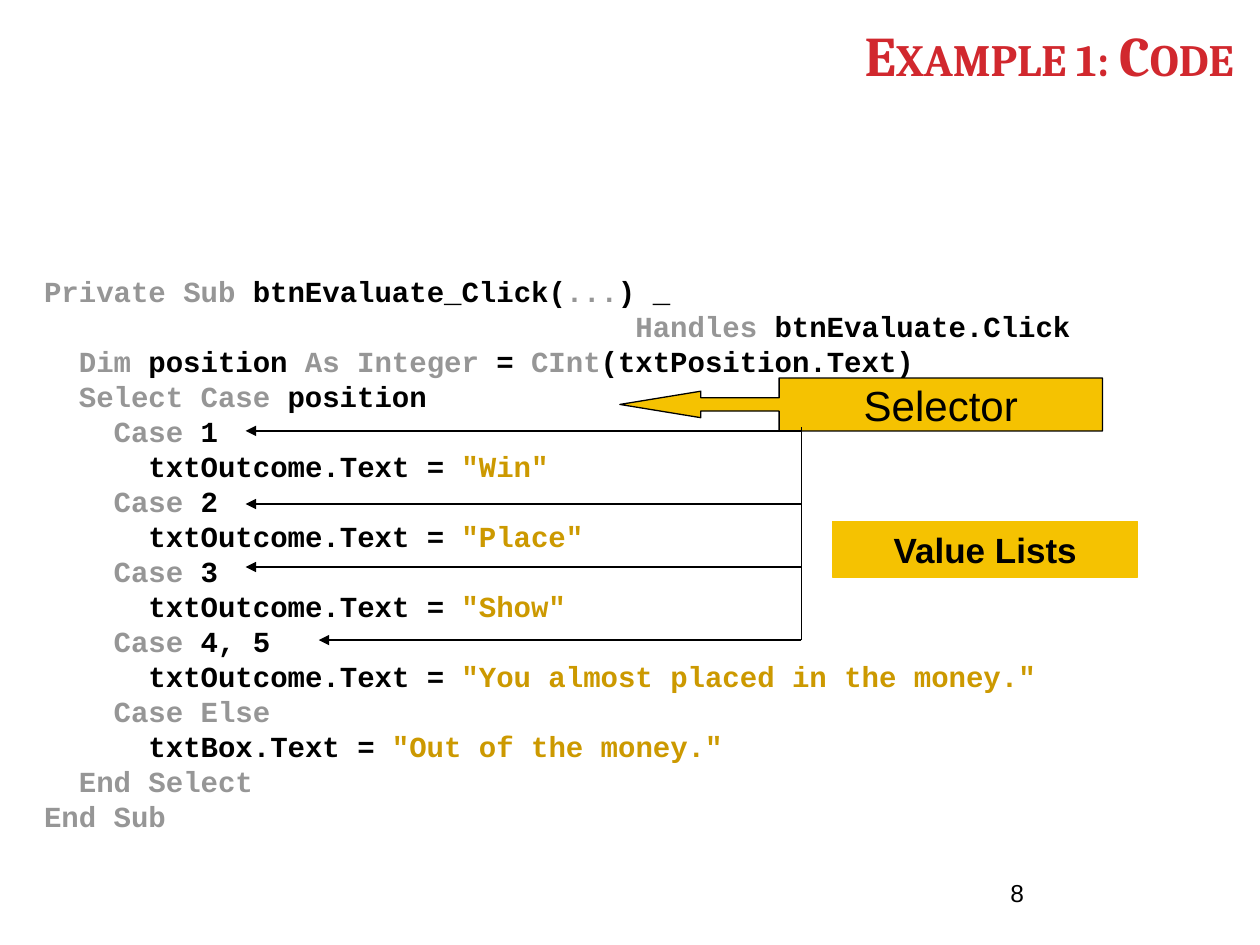
from lxml.etree import SubElement
from pptx import Presentation
from pptx.dml.color import RGBColor
from pptx.enum.shapes import MSO_CONNECTOR, MSO_SHAPE
from pptx.enum.text import MSO_ANCHOR, MSO_AUTO_SIZE, PP_ALIGN
from pptx.oxml.ns import qn
from pptx.util import Inches, Pt

RED = RGBColor(0xD1, 0x28, 0x2E)
BLACK = RGBColor(0, 0, 0)
KEYWORD_GRAY = RGBColor(0x96, 0x96, 0x96)
STRING_GOLD = RGBColor(0xCC, 0x99, 0x00)
YELLOW = RGBColor(0xF5, 0xC2, 0x01)

# Bars set off keywords and string literals from the plain code
CODE = '''\
|Private Sub| btnEvaluate_Click(|...|) _
                                  |Handles| btnEvaluate.Click
  |Dim| position |As Integer| = |CInt|(txtPosition.Text)
  |Select Case| position
    |Case| 1
      txtOutcome.Text = |"Win"|
    |Case| 2
      txtOutcome.Text = |"Place"|
    |Case| 3
      txtOutcome.Text = |"Show"|
    |Case| 4, 5
      txtOutcome.Text = |"You almost placed in the money."|
    |Case Else|
      txtBox.Text = |"Out of the money."|
  |End Select|
|End Sub|'''


class SlideBuilder:
    body_font = "Arial"
    title_font = "Cambria"
    code_font = "Courier New"
    line_width = Pt(0.75)

    def __init__(self, presentation):
        self.slide = presentation.slides.add_slide(presentation.slide_layouts[1])

    def place(self, shape, left, top, width, height):
        shape.left, shape.top = Inches(left), Inches(top)
        shape.width, shape.height = Inches(width), Inches(height)

    def style(self, paragraph, size, name=None, color=BLACK, bold=False):
        font = paragraph.font
        font.name = name or self.body_font
        font.size = Pt(size)
        font.bold = bold
        font.color.rgb = color

    def title(self, text, *box):
        shape = self.slide.shapes.title
        self.place(shape, *box)
        frame = shape.text_frame
        frame.auto_size = MSO_AUTO_SIZE.NONE
        frame.vertical_anchor = MSO_ANCHOR.BOTTOM
        frame.text = text
        paragraph = frame.paragraphs[0]
        paragraph.alignment = PP_ALIGN.RIGHT
        self.style(paragraph, 32, self.title_font, RED, True)
        paragraph.runs[0].font._element.set("cap", "small")

    def code(self, source, *box):
        shape = self.slide.placeholders[1]
        self.place(shape, *box)
        frame = shape.text_frame
        frame.auto_size = MSO_AUTO_SIZE.NONE
        for number, line in enumerate(source.split("\n")):
            paragraph = frame.add_paragraph() if number else frame.paragraphs[0]
            properties = paragraph._p.get_or_add_pPr()
            properties.set("marL", str(Inches(0.3)))
            properties.set("indent", str(-Inches(0.3)))
            SubElement(properties, qn("a:buNone"))
            paragraph.line_spacing = Pt(16.5)
            paragraph.space_before = Pt(3.5 if number else 0)
            self.style(paragraph, 16.6, self.code_font, bold=True)
            for position, part in enumerate(line.split("|")):
                if not part:
                    continue
                run = paragraph.add_run()
                run.text = part
                if position % 2:
                    is_string = part.startswith('"')
                    run.font.color.rgb = STRING_GOLD if is_string else KEYWORD_GRAY

    def text(self, text, size, left, top, width, height):
        shape = self.slide.shapes.add_textbox(
            Inches(left), Inches(top), Inches(width), Inches(height))
        frame = shape.text_frame
        frame.word_wrap = True
        frame.text = text
        self.style(frame.paragraphs[0], size)

    def label(self, preset, text, size, box, line=BLACK, bold=False, wrap=True):
        shape = self.slide.shapes.add_shape(preset, *map(Inches, box))
        shape.shadow.inherit = False
        shape.fill.solid()
        shape.fill.fore_color.rgb = YELLOW
        shape.line.color.rgb = line
        shape.line.width = self.line_width
        frame = shape.text_frame
        frame.word_wrap = wrap
        frame.vertical_anchor = MSO_ANCHOR.MIDDLE
        frame.text = text
        paragraph = frame.paragraphs[0]
        paragraph.alignment = PP_ALIGN.CENTER
        self.style(paragraph, size, bold=bold)
        return shape

    def line(self, start, end, arrow=False):
        connector = self.slide.shapes.add_connector(
            MSO_CONNECTOR.STRAIGHT, *map(Inches, start + end))
        connector.line.color.rgb = BLACK
        connector.line.width = self.line_width
        if arrow:
            SubElement(connector.line._get_or_add_ln(), qn("a:tailEnd"), type="triangle")
        SubElement(connector._element.spPr, qn("a:effectLst"))


def main():
    presentation = Presentation()
    presentation.slide_width = Inches(10)
    presentation.slide_height = Inches(7.5)
    builder = SlideBuilder(presentation)

    # Title, code and slide number
    builder.title("Example 1: Code", 0.17, 0.14, 9.72, 0.61)
    builder.code(CODE, 0.25, 2.17, 9.54, 4.54)
    builder.text("8", 14, 7.92, 6.92, 2.08, 0.5)

    # Labels
    selector = builder.label(MSO_SHAPE.LEFT_ARROW_CALLOUT, "Selector", 24,
                             (4.92, 3, 3.83, 0.42), wrap=False)
    for index, value in enumerate((0.25, 0.25, 1.53, 0.67)):
        selector.adjustments[index] = value
    builder.label(MSO_SHAPE.RECTANGLE, "Value Lists", 20,
                  (6.61, 4.14, 2.42, 0.44), line=YELLOW, bold=True)

    # Arrows from the value lists bracket to each case
    bracket = 6.36
    for tip, height in ((1.95, 3.42), (1.95, 4), (1.95, 4.5), (2.53, 5.08)):
        builder.line((bracket, height), (tip, height), arrow=True)
    builder.line((bracket, 3.39), (bracket, 5.08))

    presentation.save("out.pptx")


if __name__ == "__main__":
    main()
